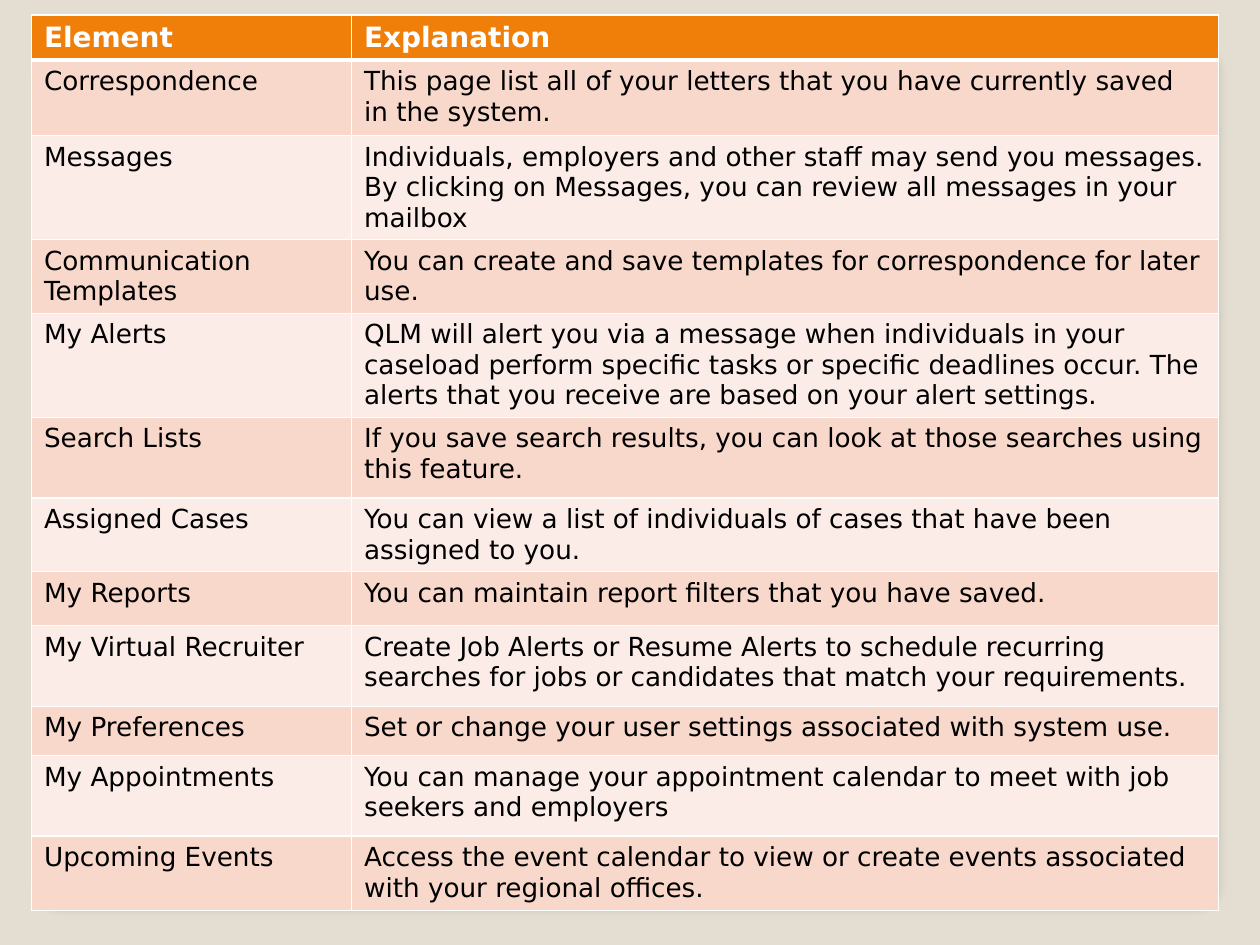
from lxml import etree
from pptx import Presentation
from pptx.dml.color import RGBColor
from pptx.enum.shapes import MSO_SHAPE
from pptx.oxml.ns import qn
from pptx.util import Inches, Pt

ROUND = MSO_SHAPE.ROUNDED_RECTANGLE
FONT = "DejaVu Sans"
HUES = {
    "back": "E3DED1", "panel": "FFFFFF", "edge": "A4A4A4", "shade": "000000",
    "head": "F07F09", "odd": "F9D8CC", "even": "FCECE7",
    "rule": "FFFFFF", "title": "FFFFFF", "text": "000000",
}
COLS = [2.54, 6.88]
# Height, element, explanation
ROWS = [
    (0.35, "Element", "Explanation"),
    (0.6, "Correspondence",
     "This page list all of your letters that you have currently saved in the system."),
    (0.82, "Messages",
     "Individuals, employers and other staff may send you messages. "
     "By clicking on Messages, you can review all messages in your mailbox"),
    (0.58, "Communication Templates",
     "You can create and save templates for correspondence for later use."),
    (0.82, "My Alerts",
     "QLM will alert you via a message when individuals in your caseload perform "
     "specific tasks or specific deadlines occur. "
     "The alerts that you receive are based on your alert settings."),
    (0.64, "Search Lists",
     "If you save search results, you can look at those searches using this feature."),
    (0.58, "Assigned Cases",
     "You can view a list of individuals of cases that have been assigned to you."),
    (0.43, "My Reports", "You can maintain report filters that you have saved."),
    (0.64, "My Virtual Recruiter",
     "Create Job Alerts or Resume Alerts to schedule recurring searches for jobs "
     "or candidates that match your requirements."),
    (0.39, "My Preferences",
     "Set or change your user settings associated with system use."),
    (0.64, "My Appointments",
     "You can manage your appointment calendar to meet with job seekers and employers"),
    (0.59, "Upcoming Events",
     "Access the event calendar to view or create events associated with your "
     "regional offices."),
]


def hue(name):
    return RGBColor.from_string(HUES[name])


def paint(fill, name):
    fill.solid()
    fill.fore_color.rgb = hue(name)


def write(frame, text, size=15, color="text", bold=False):
    run = frame.paragraphs[0].add_run()
    run.text = text
    font = run.font
    font.name, font.size, font.bold = FONT, Pt(size), bold
    font.color.rgb = hue(color)


def node(root, tag, **attrs):
    return etree.SubElement(root, qn(tag), {k: str(v) for k, v in attrs.items()})


def border(cell, top=1, bottom=1):
    props = cell._tc.get_or_add_tcPr()
    for side, width in zip("LRTB", (1, 1, top, bottom)):
        line = node(props, f"a:ln{side}", w=Pt(width))
        node(node(line, "a:solidFill"), "a:srgbClr", val=HUES["rule"])


def draw_panel(slide, left, top, width, height):
    panel = slide.shapes.add_shape(ROUND, left, top, width, height)
    panel.adjustments[0] = 0.021
    paint(panel.fill, "panel")
    paint(panel.line.fill, "edge")
    panel.line.width = Pt(0.16)
    # Soft shadow below the panel
    panel.shadow.inherit = False
    effects = panel._element.spPr.find(qn("a:effectLst"))
    shade = node(effects, "a:outerShdw", blurRad=Pt(6), dist=Pt(4),
                 dir=90 * 60000, algn="ctr", rotWithShape=0)
    node(node(shade, "a:srgbClr", val=HUES["shade"]), "a:alpha", val=25000)


def draw_table(slide, left, top, width, height):
    table = slide.shapes.add_table(
        len(ROWS), len(COLS), left, top, width, height).table
    for col, size in zip(table.columns, COLS):
        col.width = Inches(size)
    for i, (tall, *texts) in enumerate(ROWS):
        table.rows[i].height = Inches(tall)
        head = i == 0
        band = "head" if head else "odd" if i % 2 else "even"
        style = dict(size=16, color="title", bold=True) if head else {}
        for j, text in enumerate(texts):
            cell = table.cell(i, j)
            write(cell.text_frame, text, **style)
            # The rule under the heading is heavier
            border(cell, top=3 if i == 1 else 1, bottom=3 if head else 1)
            paint(cell.fill, band)


def main():
    deck = Presentation()
    deck.slide_width, deck.slide_height = Inches(10), Inches(7.5)
    slide = deck.slides.add_slide(deck.slide_layouts[6])
    paint(slide.background.fill, "back")
    draw_panel(slide, Inches(0.33), Inches(0.36), Inches(9.33), Inches(6.78))
    draw_table(slide, Inches(0.25), Inches(0.12), Inches(sum(COLS)),
               Inches(sum(row[0] for row in ROWS)))
    deck.save("out.pptx")


if __name__ == "__main__":
    main()
